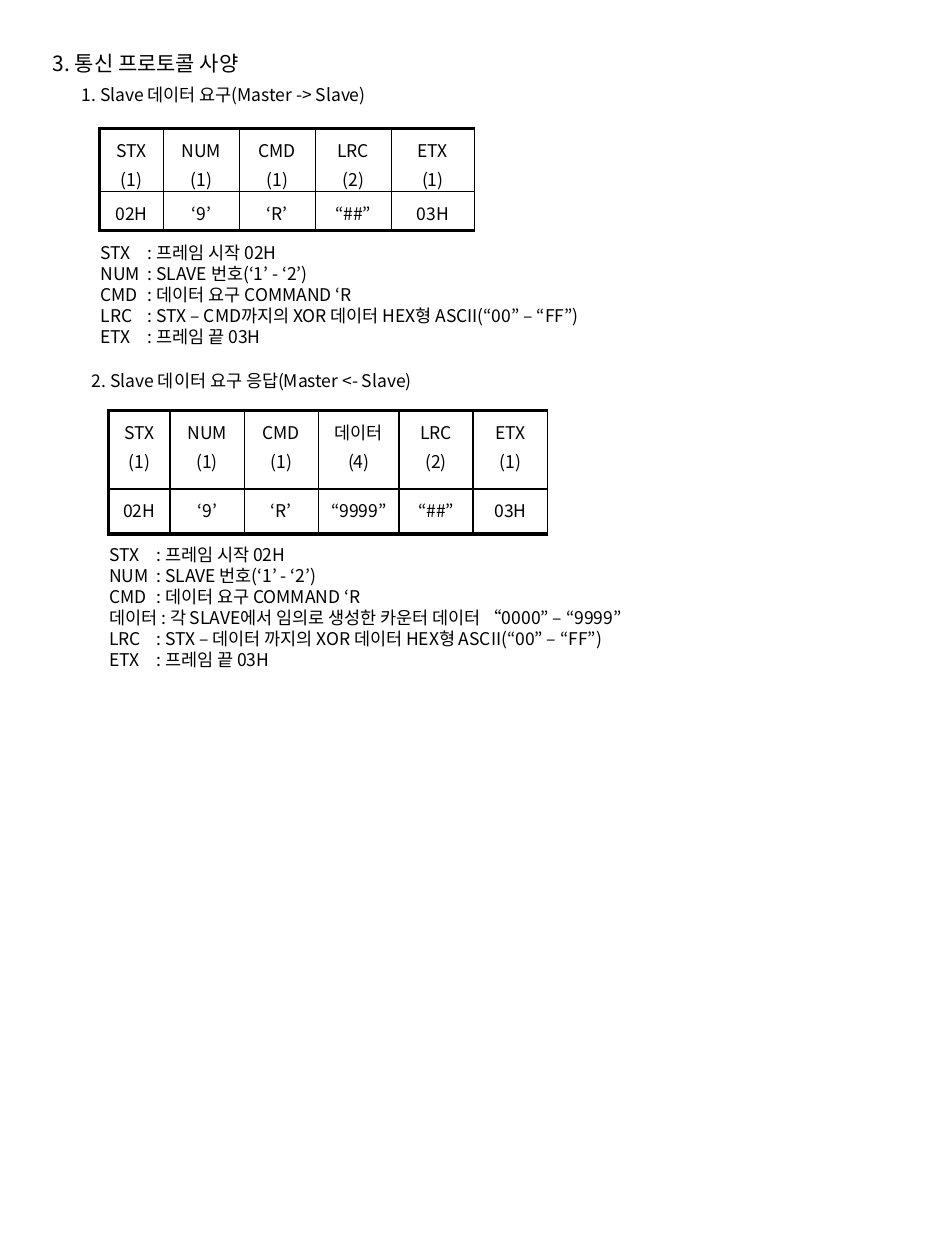
from lxml.etree import SubElement
from pptx import Presentation
from pptx.dml.color import RGBColor
from pptx.enum.text import MSO_ANCHOR, PP_ALIGN
from pptx.oxml.ns import qn
from pptx.util import Pt

FONT = "Noto Sans CJK KR"
BLACK = "000000"
THICK, THIN = 2.25, 1
CELL_MARGIN = 5.04


def write_text(text_frame, text, size=10, color=BLACK, align=None, before=None,
               line=None, tab=None):
    """Write one paragraph per line of text; tab is a left tab stop in points."""
    for index, content in enumerate(text.split("\n")):
        paragraph = text_frame.paragraphs[0] if index == 0 else text_frame.add_paragraph()
        paragraph.alignment = align
        if before is not None:
            paragraph.space_before = Pt(before)
        if line is not None:
            paragraph.line_spacing = Pt(line)
        if tab is not None:
            tab_list = SubElement(paragraph._p.get_or_add_pPr(), qn("a:tabLst"))
            SubElement(tab_list, qn("a:tab"), pos=str(Pt(tab)), algn="l")
        run = paragraph.add_run()
        run.text = content
        run.font.size = Pt(size)
        run.font.name = FONT
        run.font.color.rgb = RGBColor.from_string(color)
        SubElement(run._r.get_or_add_rPr(), qn("a:ea"), typeface=FONT)


def set_border(cell, side, width, color=BLACK):
    """Draw one border; call for lnL, lnR, lnT, lnB in that order."""
    border = SubElement(cell._tc.get_or_add_tcPr(), qn(f"a:{side}"), w=str(Pt(width)))
    fill = SubElement(border, qn("a:solidFill"))
    SubElement(fill, qn("a:srgbClr"), val=color)


presentation = Presentation()
presentation.slide_width, presentation.slide_height = Pt(540), Pt(720)
slide = presentation.slides.add_slide(presentation.slide_layouts[6])

# Title, section headings and field notes
text_boxes = [
    (23, 22.3, 191, 27.4, "3. 통신 프로토콜 사양",
     dict(size=12, align=PP_ALIGN.JUSTIFY)),
    (39.6, 44.6, 193, 19.4, "1. Slave 데이터 요구(Master -> Slave)", dict(line=12)),
    (50.4, 134.6, 326, 67.7,
     "STX\t: 프레임 시작 02H\n"
     "NUM\t: SLAVE 번호(‘1’ - ‘2’)\n"
     "CMD\t: 데이터 요구 COMMAND ‘R\n"
     "LRC\t: STX – CMD까지의 XOR 데이터 HEX형 ASCII(“00” – “FF”)\n"
     "ETX\t: 프레임 끝 03H", dict(line=12, tab=27)),
    (45.4, 208, 219.6, 19.4, "2. Slave 데이터 요구 응답(Master <- Slave)", dict(line=12)),
    (55.4, 306.7, 343.4, 80,
     "STX\t: 프레임 시작 02H\n"
     "NUM\t: SLAVE 번호(‘1’ - ‘2’)\n"
     "CMD\t: 데이터 요구 COMMAND ‘R\n"
     "데이터 : 각 SLAVE에서 임의로 생성한 카운터 데이터 “0000” – “9999”\n"
     "LRC\t: STX – 데이터 까지의 XOR 데이터 HEX형 ASCII(“00” – “FF”)\n"
     "ETX\t: 프레임 끝 03H", dict(line=12, tab=27)),
]
for left, top, width, height, text, text_format in text_boxes:
    text_box = slide.shapes.add_textbox(Pt(left), Pt(top), Pt(width), Pt(height))
    text_frame = text_box.text_frame
    text_frame.word_wrap = True
    text_frame.vertical_anchor = MSO_ANCHOR.MIDDLE
    write_text(text_frame, text, **text_format)

# Frame layouts: field name and byte count above an example value
frame_tables = [
    (56.9, 73.4, [36.5, 43.4, 43.4, 43.4, 47.5], [34.6, 20.9],
     [["STX\n(1)", "NUM\n(1)", "CMD\n(1)", "LRC\n(2)", "ETX\n(1)"],
      ["02H", "‘9’", "‘R’", "“##”", "03H"]]),
    (61.9, 234.7, [35.3, 42.4, 42.4, 46.1, 42.4, 42.4], [44.6, 25.9],
     [["STX\n(1)", "NUM\n(1)", "CMD\n(1)", "데이터\n(4)", "LRC\n(2)", "ETX\n(1)"],
      ["02H", "‘9’", "‘R’", "“9999”", "“##”", "03H"]]),
]
for left, top, column_widths, row_heights, rows in frame_tables:
    table = slide.shapes.add_table(
        len(rows), len(column_widths), Pt(left), Pt(top),
        Pt(sum(column_widths)), Pt(sum(row_heights))).table
    table.first_row = table.horz_banding = False
    for column, width in zip(table.columns, column_widths):
        column.width = Pt(width)
    for row, height in zip(table.rows, row_heights):
        row.height = Pt(height)
    for row_index, values in enumerate(rows):
        for column_index, value in enumerate(values):
            cell = table.cell(row_index, column_index)
            cell.margin_left = cell.margin_right = Pt(CELL_MARGIN)
            cell.margin_top = cell.margin_bottom = Pt(CELL_MARGIN)
            write_text(cell.text_frame, value, align=PP_ALIGN.CENTER, before=2)
            set_border(cell, "lnL", THICK if column_index == 0 else THIN)
            set_border(cell, "lnR", THIN)
            set_border(cell, "lnT", THICK if row_index == 0 else THIN)
            set_border(cell, "lnB", THICK if row_index == len(rows) - 1 else THIN)
            cell.fill.background()

presentation.save("out.pptx")
